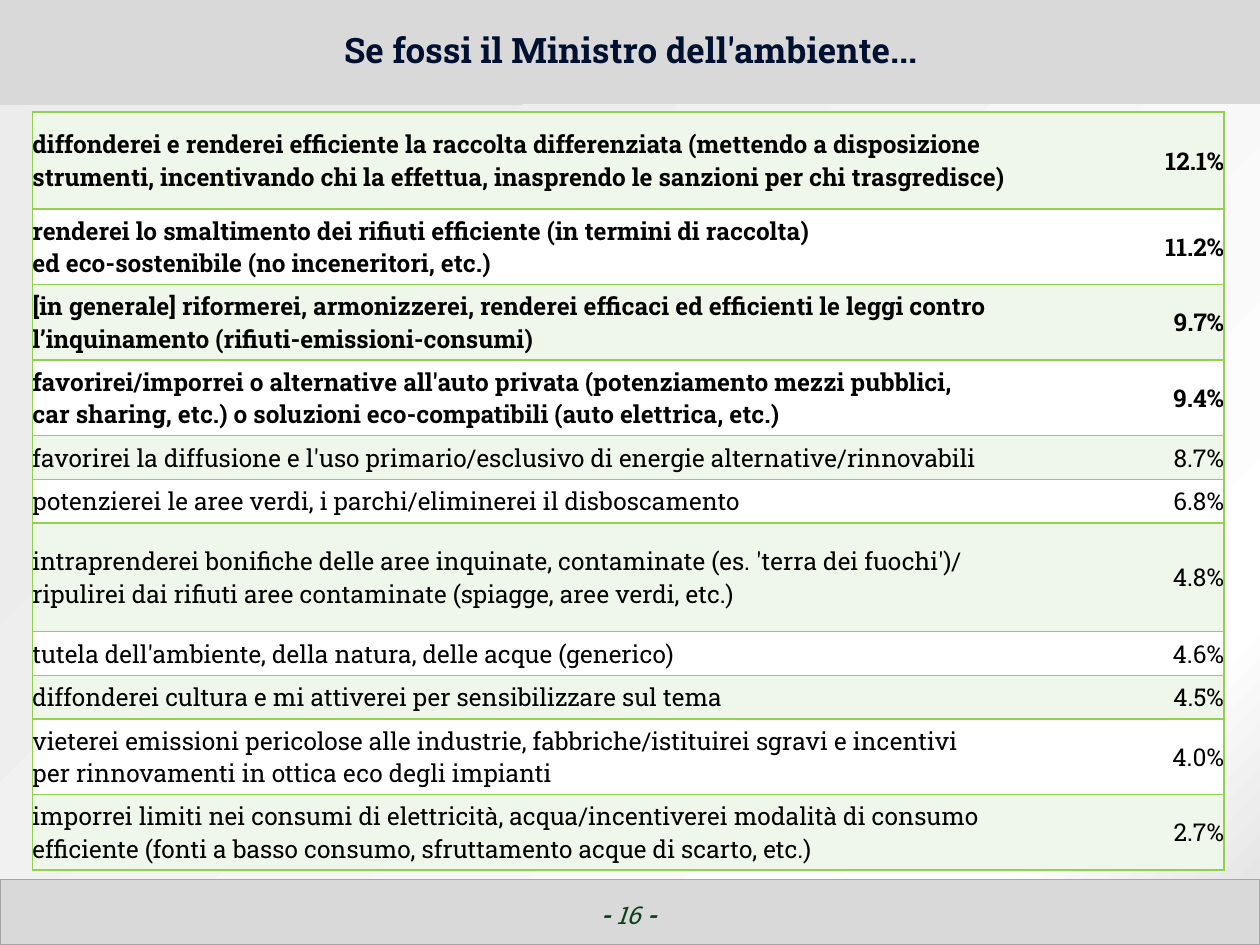
from lxml import etree
from pptx import Presentation
from pptx.dml.color import RGBColor
from pptx.enum.shapes import MSO_SHAPE
from pptx.enum.text import MSO_ANCHOR, PP_ALIGN
from pptx.oxml import parse_xml
from pptx.oxml.ns import nsdecls, qn
from pptx.util import Pt

RECT = MSO_SHAPE.RECTANGLE
MIDDLE = MSO_ANCHOR.MIDDLE
LEFT, CENTER, RIGHT = PP_ALIGN.LEFT, PP_ALIGN.CENTER, PP_ALIGN.RIGHT

FACE = "Roboto Slab"
GRAY = RGBColor(0xD9, 0xD9, 0xD9)
EDGE = RGBColor(0xA6, 0xA6, 0xA6)
NAVY = RGBColor(0x00, 0x10, 0x30)
GREEN = RGBColor(0x0D, 0x41, 0x1A)
LIME = RGBColor(0x92, 0xD0, 0x50)
PALE = RGBColor(0xEE, 0xF7, 0xE9)
WHITE = RGBColor(0xFF, 0xFF, 0xFF)
BLACK = RGBColor(0x00, 0x00, 0x00)

# answer, share, row height; \v breaks a line, \n starts a paragraph
ROWS = [
    ("diffonderei e renderei efficiente la raccolta differenziata (mettendo a disposizione "
     "strumenti, incentivando chi la effettua, inasprendo le sanzioni per chi trasgredisce)",
     "12.1%", 55.4),
    ("renderei lo smaltimento dei rifiuti efficiente (in termini di raccolta)\v"
     "ed eco-sostenibile (no inceneritori, etc.)", "11.2%", 38.9),
    ("[in generale] riformerei, armonizzerei, renderei efficaci ed efficienti le leggi contro "
     "l’inquinamento (rifiuti-emissioni-consumi)", "9.7%", 43.2),
    ("favorirei/imporrei o alternative all'auto privata (potenziamento mezzi pubblici,\v"
     "car sharing, etc.) o soluzioni eco-compatibili (auto elettrica, etc.)", "9.4%", 43.2),
    ("favorirei la diffusione e l'uso primario/esclusivo di energie alternative/rinnovabili",
     "8.7%", 25),
    ("potenzierei le aree verdi, i parchi/eliminerei il disboscamento", "6.8%", 25),
    ("intraprenderei bonifiche delle aree inquinate, contaminate (es. 'terra dei fuochi')/\n"
     "ripulirei dai rifiuti aree contaminate (spiagge, aree verdi, etc.)", "4.8%", 62),
    ("tutela dell'ambiente, della natura, delle acque (generico)", "4.6%", 25),
    ("diffonderei cultura e mi attiverei per sensibilizzare sul tema", "4.5%", 25),
    ("vieterei emissioni pericolose alle industrie, fabbriche/istituirei sgravi e incentivi\v"
     "per rinnovamenti in ottica eco degli impianti", "4.0%", 43.2),
    ("imporrei limiti nei consumi di elettricità, acqua/incentiverei modalità di consumo "
     "efficiente (fonti a basso consumo, sfruttamento acque di scarto, etc.)", "2.7%", 43.2),
]
BOLD_ROWS = 4


def style(font, color, **looks):
    font.color.rgb = color
    for key, value in {"name": FACE, "size": Pt(14), **looks}.items():
        setattr(font, key, value)


def border(cell, sides):
    """Draw lime lines on the given sides and hide the others."""
    props = cell._tc.get_or_add_tcPr()
    for side in "LRTB":
        line = etree.SubElement(props, qn("a:ln" + side), w=str(Pt(1)))
        if side in sides:
            fill = etree.SubElement(line, qn("a:solidFill"))
            etree.SubElement(fill, qn("a:srgbClr"), val=str(LIME))
        else:
            etree.SubElement(line, qn("a:noFill"))


deck = Presentation()
deck.slide_width, deck.slide_height = Pt(720), Pt(540)
slide = deck.slides.add_slide(deck.slide_layouts[5])
shapes = slide.shapes

# Header, footer and shaded middle
bands = []
for top, height in [(0, 60.5), (502.5, 37.5), (59.8, 442.2)]:
    band = shapes.add_shape(RECT, 0, Pt(top), Pt(720), Pt(height))
    band.shadow.inherit = False
    band.fill.solid()
    band.fill.fore_color.rgb = GRAY
    band.line.fill.background()
    bands.append(band)
header, footer, middle = bands
footer.line.color.rgb = EDGE
footer.line.width = Pt(0.75)

stops = "".join(
    f'<a:gs pos="{place * 1000}"><a:srgbClr val="{color}"/></a:gs>'
    for place, color in [(0, "E6E6E6"), (13, "FFFFFF"), (82, "ECECEC")])
shade = parse_xml(
    f'<a:gradFill {nsdecls("a")}><a:gsLst>{stops}</a:gsLst><a:path path="circle">'
    '<a:fillToRect l="100000" t="100000"/></a:path></a:gradFill>')
solid = middle.element.spPr.find(qn("a:solidFill"))
solid.getparent().replace(solid, shade)

# Page number
page = shapes.add_textbox(Pt(275), Pt(510.5), Pt(168), Pt(37.5)).text_frame
page.word_wrap = True
para = page.paragraphs[0]
para.alignment = CENTER
for text, bold in [("- ", True), ("16 ", False), ("-", True)]:
    run = para.add_run()
    run.text = text
    style(run.font, GREEN, bold=bold, italic=True)

# Title, moved in front of the header
title = shapes.title
title.element.getparent().append(title.element)
title.left, title.top, title.width, title.height = Pt(11.5), Pt(2), Pt(698), Pt(57)
title.text_frame.text = "Se fossi il Ministro dell'ambiente..."
title.text_frame.vertical_anchor = MIDDLE
para = title.text_frame.paragraphs[0]
para.alignment = CENTER
para.line_spacing = Pt(20)
style(para.runs[0].font, NAVY, size=Pt(20), bold=True)

# Answers
total = sum(height for *_, height in ROWS)
table = shapes.add_table(len(ROWS), 2, Pt(18.5), Pt(64), Pt(681), Pt(total)).table
table.first_row = table.horz_banding = False
table.columns[0].width, table.columns[1].width = Pt(594.7), Pt(86.3)
for i, (answer, share, height) in enumerate(ROWS):
    table.rows[i].height = Pt(height)
    for j, (text, align, sides) in enumerate([(answer, LEFT, "LTB"), (share, RIGHT, "RTB")]):
        cell = table.cell(i, j)
        border(cell, sides)
        cell.fill.solid()
        cell.fill.fore_color.rgb = WHITE if i % 2 else PALE
        cell.vertical_anchor = MIDDLE
        cell.margin_left = cell.margin_right = 0
        cell.margin_top = cell.margin_bottom = Pt(3)
        cell.text_frame.text = text
        for para in cell.text_frame.paragraphs:
            para.alignment = align
            for run in para.runs:
                style(run.font, BLACK, bold=i < BOLD_ROWS)

deck.save("out.pptx")
